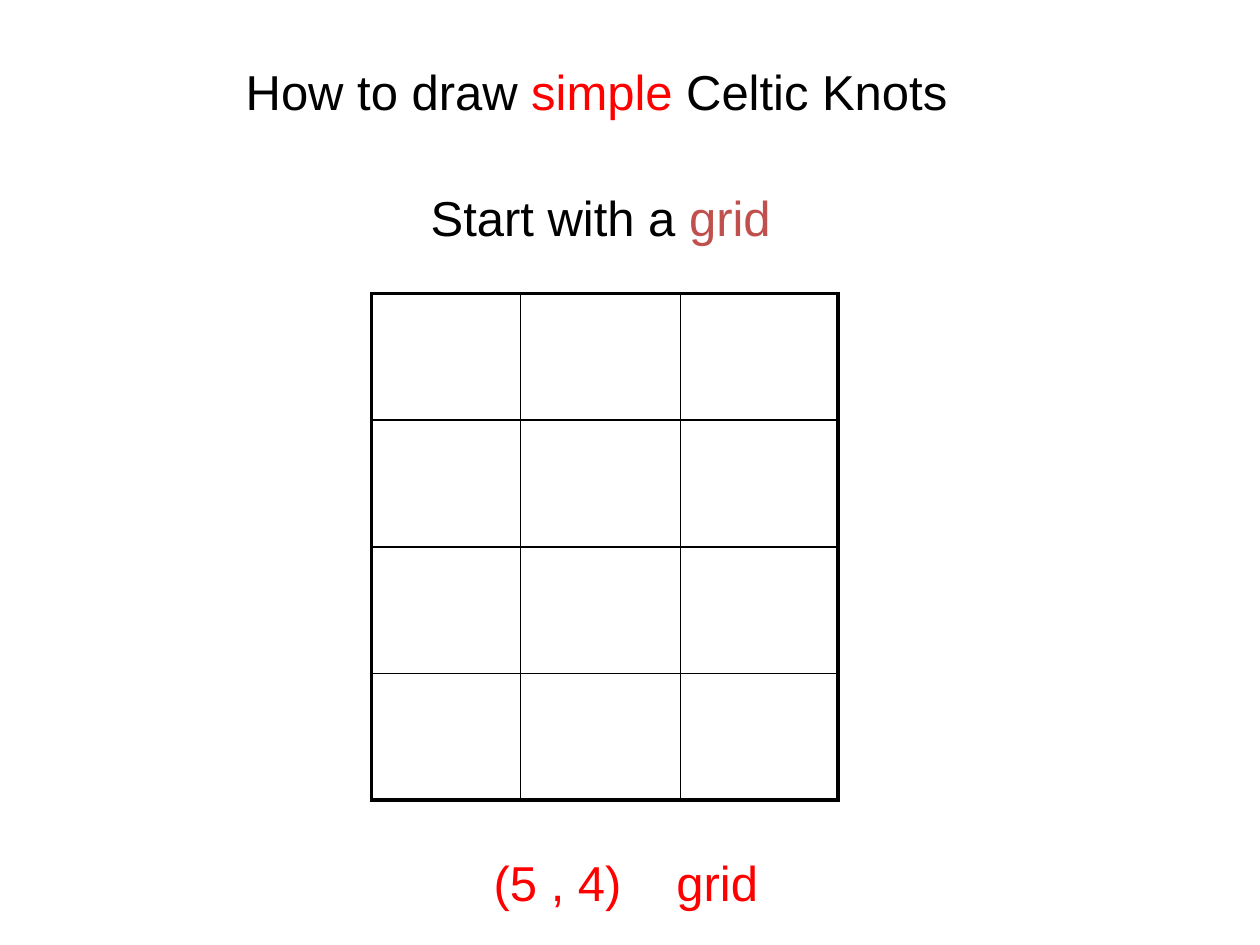
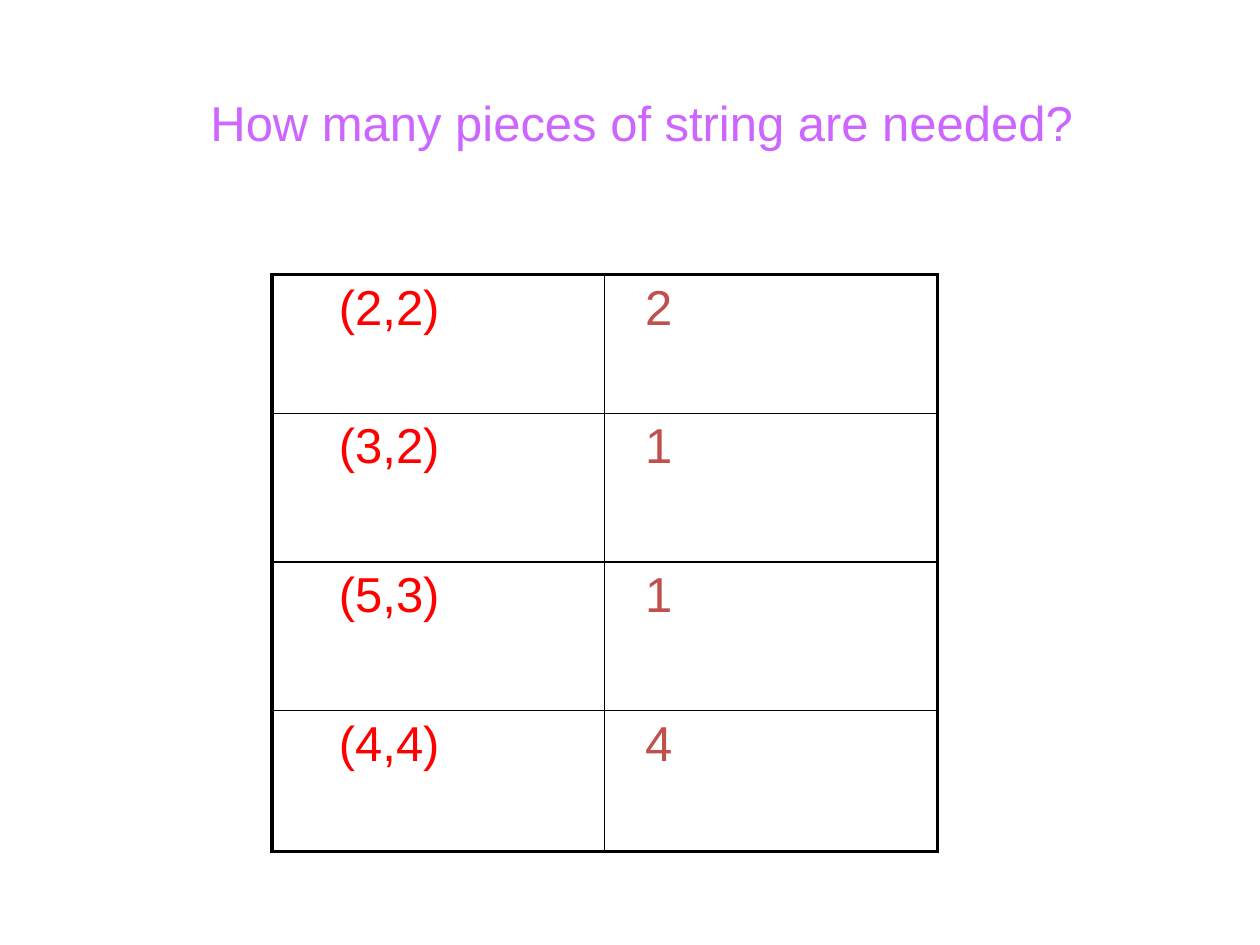
from dataclasses import dataclass

import pptx
import pptx.dml.color
import pptx.enum.text
import pptx.oxml
import pptx.oxml.ns
import pptx.util

# Shared look; all lengths below are percentages of the slide's size
SLIDE_WIDTH, SLIDE_HEIGHT = 10, 7.5
TITLE_ONLY = 5
FONT, TEXT_SIZE = "Arial", 28
BLACK, RED, BRICK, VIOLET = "000000", "FF0000", "C0504D", "CC66FF"
OUTER_LINE, INNER_LINE = 2.25, 1
LINE_HEIGHT = 7.6


@dataclass(frozen=True)
class Span:
    text: str
    colour: str = BLACK


@dataclass(frozen=True)
class TextLine:
    left: float
    top: float
    width: float
    spans: tuple[Span, ...]


@dataclass(frozen=True)
class Grid:
    left: float
    top: float
    columns: tuple[float, ...]
    rows: tuple[float, ...]


def across(share: float) -> int:
    return pptx.util.Inches(SLIDE_WIDTH * share / 100)


def down(share: float) -> int:
    return pptx.util.Inches(SLIDE_HEIGHT * share / 100)


def rgb(colour: str) -> pptx.dml.color.RGBColor:
    return pptx.dml.color.RGBColor.from_string(colour)


def write_spans(para, spans: tuple[Span, ...]) -> None:
    para.alignment = pptx.enum.text.PP_ALIGN.LEFT
    para.font.name = FONT
    para.font.size = pptx.util.Pt(TEXT_SIZE)
    for span in spans:
        run = para.add_run()
        run.text = span.text
        run.font.color.rgb = rgb(span.colour)


def fill_line(box, line: TextLine) -> None:
    box.left, box.top = across(line.left), down(line.top)
    box.width, box.height = across(line.width), down(LINE_HEIGHT)
    frame = box.text_frame
    frame.word_wrap = True
    frame.auto_size = pptx.enum.text.MSO_AUTO_SIZE.SHAPE_TO_FIT_TEXT
    frame.vertical_anchor = pptx.enum.text.MSO_ANCHOR.TOP
    write_spans(frame.paragraphs[0], line.spans)


def add_titled_page(deck, title: TextLine):
    page = deck.slides.add_slide(deck.slide_layouts[TITLE_ONLY])
    fill_line(page.shapes.title, title)
    return page


def add_line(page, line: TextLine):
    box = page.shapes.add_textbox(0, 0, 0, 0)
    fill_line(box, line)
    return box


def add_tab_stop(para, inches: float) -> None:
    tabs = pptx.oxml.parse_xml(
        f'<a:tabLst {pptx.oxml.ns.nsdecls("a")}>'
        f'<a:tab pos="{pptx.util.Inches(inches)}" algn="l"/></a:tabLst>')
    properties = para._p.get_or_add_pPr()
    properties.insert(0, tabs)


def set_borders(cell, widths: dict[str, float]) -> None:
    properties = cell._tc.get_or_add_tcPr()
    for position, (side, width) in enumerate(widths.items()):
        properties.insert(position, pptx.oxml.parse_xml(
            f'<a:ln{side} {pptx.oxml.ns.nsdecls("a")} w="{pptx.util.Pt(width)}">'
            f'<a:solidFill><a:srgbClr val="{BLACK}"/></a:solidFill></a:ln{side}>'))


def add_grid(page, grid: Grid):
    """Add an unfilled table with a heavy frame and thin inner lines."""
    row_count, column_count = len(grid.rows), len(grid.columns)
    table = page.shapes.add_table(
        row_count, column_count, across(grid.left), down(grid.top),
        across(sum(grid.columns)), down(sum(grid.rows))).table
    table.first_row = table.horz_banding = False
    for column, width in zip(table.columns, grid.columns):
        column.width = across(width)
    for row, height in zip(table.rows, grid.rows):
        row.height = down(height)
    for r in range(row_count):
        for c in range(column_count):
            cell = table.cell(r, c)
            cell.fill.background()
            on_edge = {"L": c == 0, "R": c == column_count - 1,
                       "T": r == 0, "B": r == row_count - 1}
            set_borders(cell, {side: OUTER_LINE if edge else INNER_LINE
                               for side, edge in on_edge.items()})
    return table


def build_grid_page(deck) -> None:
    page = add_titled_page(deck, TextLine(18.5, 5.87, 65.3, (
        Span("How to draw "), Span("simple", RED), Span(" Celtic Knots"))))
    add_grid(page, Grid(29.5, 31.07, (11.8, 12.7, 12.5), (13.4,) * 4))
    add_line(page, TextLine(33.2, 19.2, 47.5, (
        Span("Start with a "), Span("grid", BRICK))))
    size_label = add_line(page, TextLine(38.2, 89.6, 47.3, (
        Span("(5 , 4)\tgrid", RED),)))
    add_tab_stop(size_label.text_frame.paragraphs[0], 1.45)


def build_string_page(deck) -> None:
    page = add_titled_page(deck, TextLine(15.7, 9.07, 78.4, (
        Span("How many pieces of string are needed?", VIOLET),)))
    table = add_grid(page, Grid(
        21.6, 29.07, (26.4, 26.4), (14.67, 15.73, 15.73, 14.93)))
    # Grid sizes on the left, string counts on the right
    string_counts = (("(2,2)", "2"), ("(3,2)", "1"), ("(5,3)", "1"), ("(4,4)", "4"))
    column_styles = ((RED, 5.3), (BRICK, 3.2))
    for r, entries in enumerate(string_counts):
        for c, (entry, (colour, indent)) in enumerate(zip(entries, column_styles)):
            cell = table.cell(r, c)
            cell.margin_left = across(indent)
            write_spans(cell.text_frame.paragraphs[0], (Span(entry, colour),))


def main() -> None:
    deck = pptx.Presentation()
    deck.slide_width = pptx.util.Inches(SLIDE_WIDTH)
    deck.slide_height = pptx.util.Inches(SLIDE_HEIGHT)
    build_grid_page(deck)
    build_string_page(deck)
    deck.save("out.pptx")


if __name__ == "__main__":
    main()
